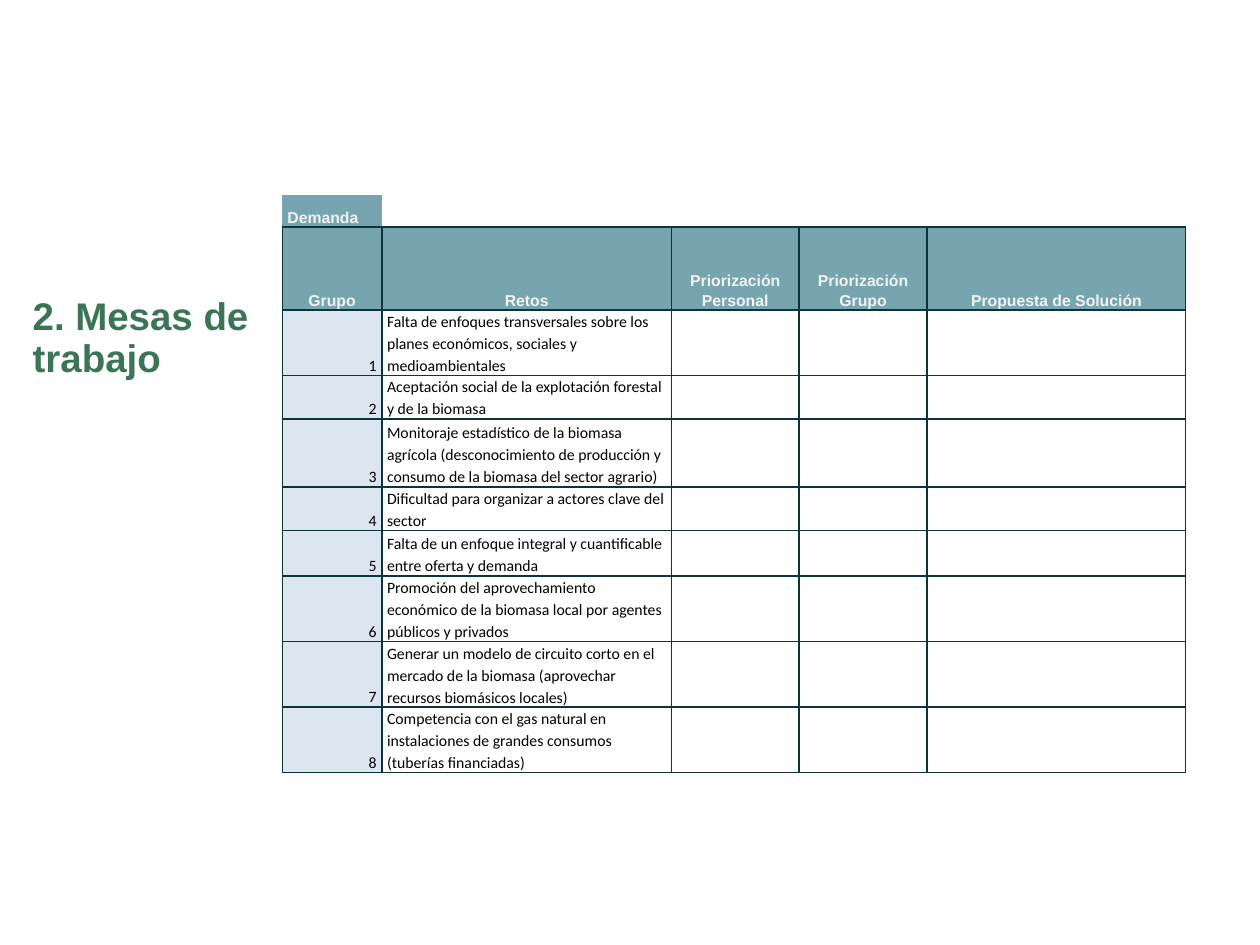
from lxml.etree import SubElement
from pptx import Presentation
from pptx.dml.color import RGBColor
from pptx.enum.text import MSO_ANCHOR, MSO_AUTO_SIZE, PP_ALIGN
from pptx.oxml.ns import qn
from pptx.util import Pt

COLORS = {"title": "3B7555", "header": "76A5AF", "header_text": "F3F3F3",
          "number": "DCE6F1", "text": "000000", "border": "0C343D"}

HEADERS = ["Grupo", "Retos", "Priorización Personal", "Priorización Grupo",
           "Propuesta de Solución"]
CHALLENGES = [
    "Falta de enfoques transversales sobre los planes económicos, sociales y medioambientales",
    "Aceptación social de la explotación forestal y de la biomasa",
    "Monitoraje estadístico de la biomasa agrícola (desconocimiento de producción y "
    "consumo de la biomasa del sector agrario)",
    "Dificultad para organizar a actores clave del sector",
    "Falta de un enfoque integral y cuantificable entre oferta y demanda",
    "Promoción del aprovechamiento económico de la biomasa local por agentes públicos y privados",
    "Generar un modelo de circuito corto en el mercado de la biomasa "
    "(aprovechar recursos biomásicos locales)",
    "Competencia con el gas natural en instalaciones de grandes consumos (tuberías financiadas)",
]
COL_WIDTHS = [56.9, 165.6, 72.7, 73.4, 147.6]
ROW_HEIGHTS = [18, 47.5, 26, 18, 39, 18, 26, 26, 26, 26]


class Deck:
    """Holds the style and the current slide."""

    def __init__(self):
        self.prs = Presentation()
        self.prs.slide_width, self.prs.slide_height = Pt(720), Pt(540)
        self.s = self.prs.slides.add_slide(self.prs.slide_layouts[5])

    def format(self, p, size, color, font="Arial", bold=True,
               align=PP_ALIGN.LEFT, spacing=1.15):
        p.alignment, p.line_spacing = align, spacing
        p.font.name, p.font.size, p.font.bold = font, Pt(size), bold
        p.font.color.rgb = RGBColor.from_string(COLORS[color])

    def title(self, text, x, y, w, h):
        sp = self.s.shapes.title
        sp.left, sp.top, sp.width, sp.height = Pt(x), Pt(y), Pt(w), Pt(h)
        tf = sp.text_frame
        tf.text, tf.word_wrap = text, True
        tf.auto_size = MSO_AUTO_SIZE.SHAPE_TO_FIT_TEXT
        tf.vertical_anchor = MSO_ANCHOR.TOP
        tf.margin_left = tf.margin_right = tf.margin_top = tf.margin_bottom = 0
        self.format(tf.paragraphs[0], 22, "title", spacing=0.9)

    def table(self, x, y, widths, heights):
        tbl = self.s.shapes.add_table(len(heights), len(widths), Pt(x), Pt(y),
                                      Pt(sum(widths)), Pt(sum(heights))).table
        tbl.first_row = tbl.horz_banding = False
        for col, w in zip(tbl.columns, widths):
            col.width = Pt(w)
        for row, h in zip(tbl.rows, heights):
            row.height = Pt(h)
        return tbl

    def borders(self, cell, sides):
        tcPr = cell._tc.get_or_add_tcPr()
        for side in "LRTB":
            ln = SubElement(tcPr, qn(f"a:ln{side}"), w=str(Pt(1)))
            if side in sides:
                fill = SubElement(ln, qn("a:solidFill"))
                SubElement(fill, qn("a:srgbClr"), val=COLORS["border"])
            else:
                SubElement(ln, qn("a:noFill"))

    def cell(self, cell, text="", fill=None, sides="LRTB", **style):
        cell.vertical_anchor = MSO_ANCHOR.BOTTOM
        cell.margin_left = cell.margin_right = Pt(3)
        cell.margin_top = cell.margin_bottom = 0
        self.borders(cell, sides)
        if fill:
            cell.fill.solid()
            cell.fill.fore_color.rgb = RGBColor.from_string(COLORS[fill])
        else:
            cell.fill.background()
        p = cell.text_frame.paragraphs[0]
        if text:
            p.text = text
            self.format(p, 9, **style)
        else:  # keeps empty cells from stretching their row
            SubElement(p._p, qn("a:endParaRPr"), sz="900")


def main():
    deck = Deck()
    deck.title("2. Mesas de trabajo", 18.7, 170, 193, 48.2)
    tbl = deck.table(161.3, 111.6, COL_WIDTHS, ROW_HEIGHTS)

    # Label row above the grid, then the header row
    for c, header in enumerate(HEADERS):
        label = {"text": "Demanda", "fill": "header", "color": "header_text"} if c == 0 else {}
        deck.cell(tbl.cell(0, c), sides="B", **label)
        deck.cell(tbl.cell(1, c), header, "header", color="header_text",
                  align=PP_ALIGN.CENTER)

    # Numbered challenges, with blank columns to fill in
    body = {"color": "text", "font": "Calibri", "bold": False}
    for n, challenge in enumerate(CHALLENGES, 1):
        deck.cell(tbl.cell(n + 1, 0), str(n), "number", align=PP_ALIGN.RIGHT, **body)
        deck.cell(tbl.cell(n + 1, 1), challenge, **body)
        for c in range(2, len(HEADERS)):
            deck.cell(tbl.cell(n + 1, c))

    deck.prs.save("out.pptx")


if __name__ == "__main__":
    main()
